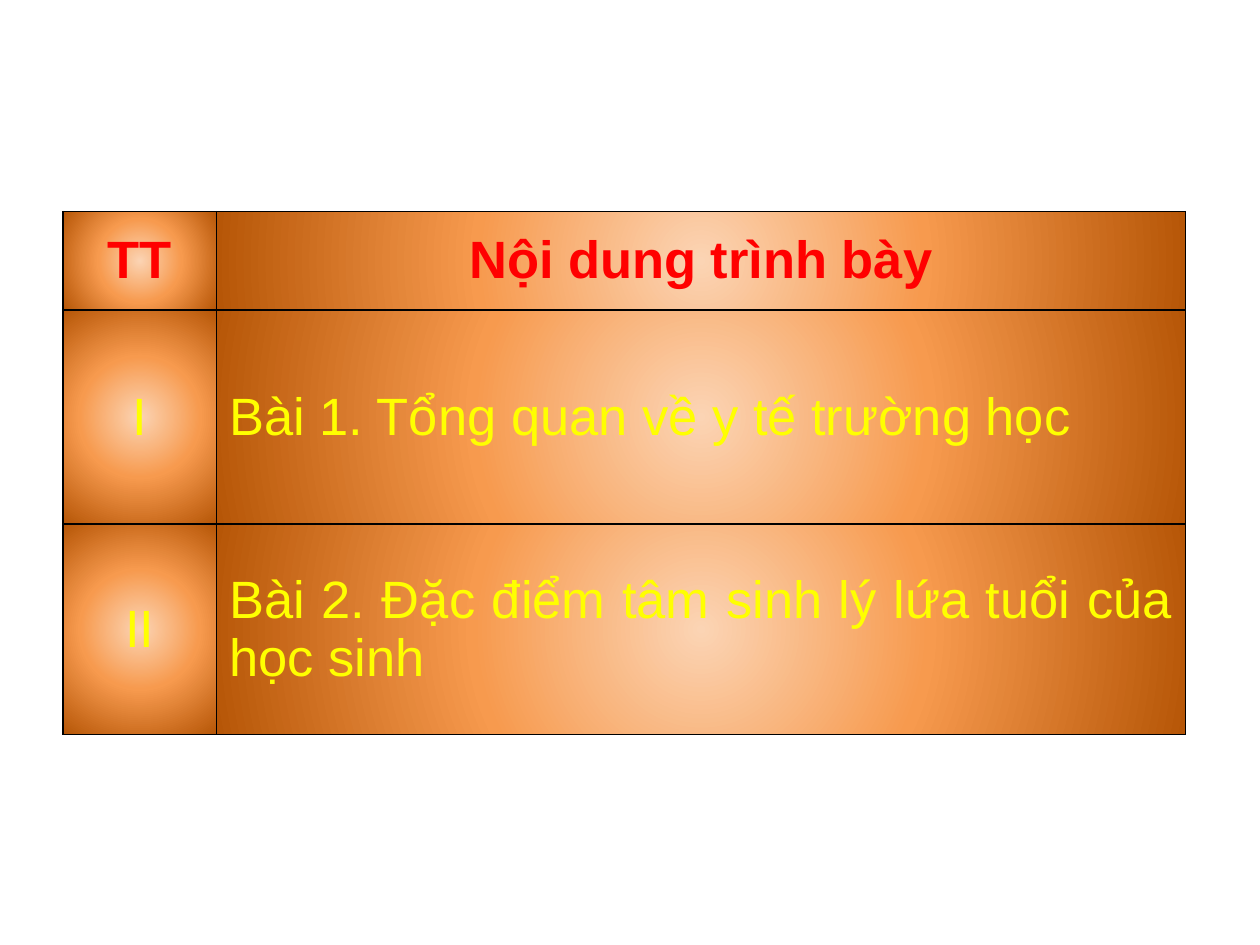
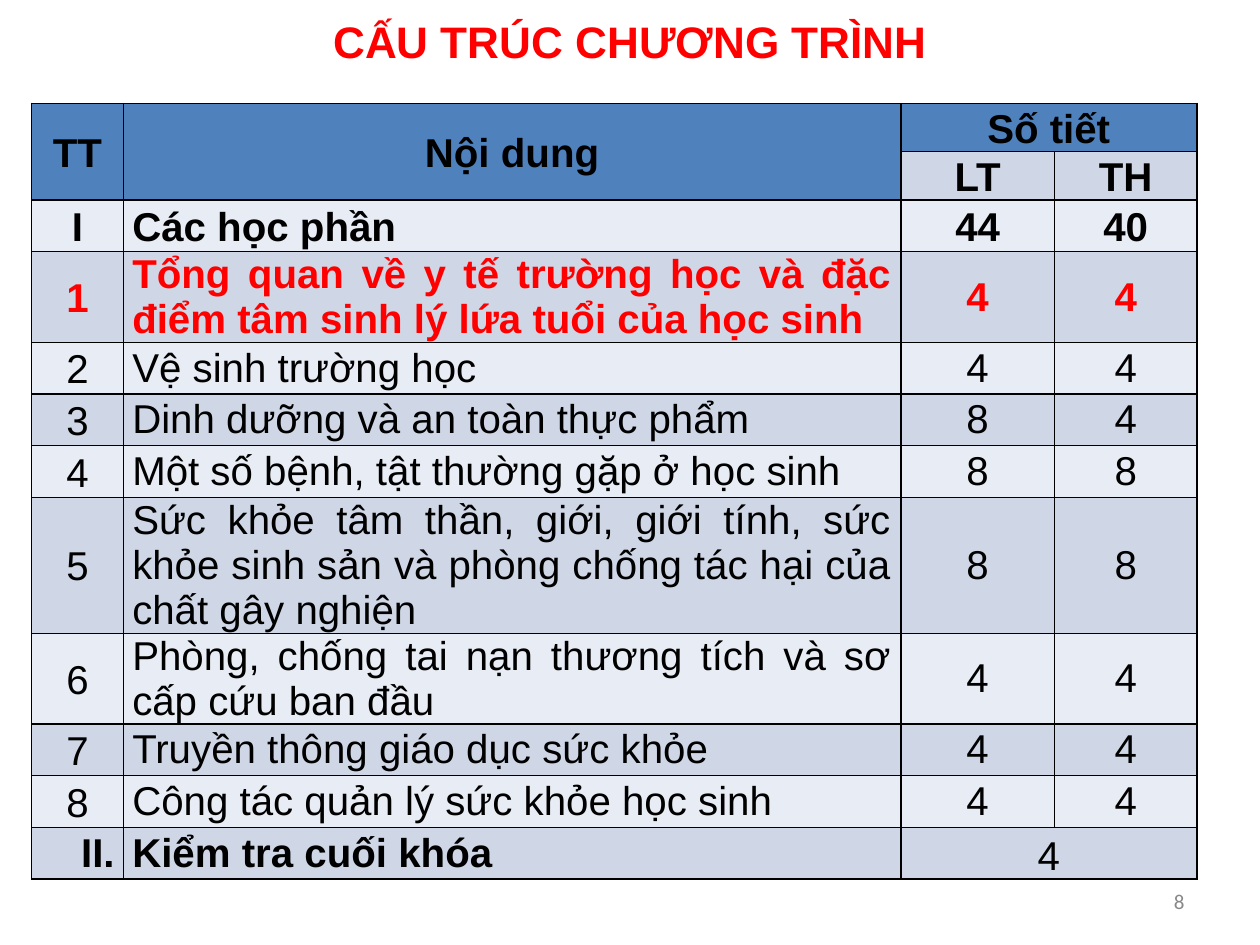
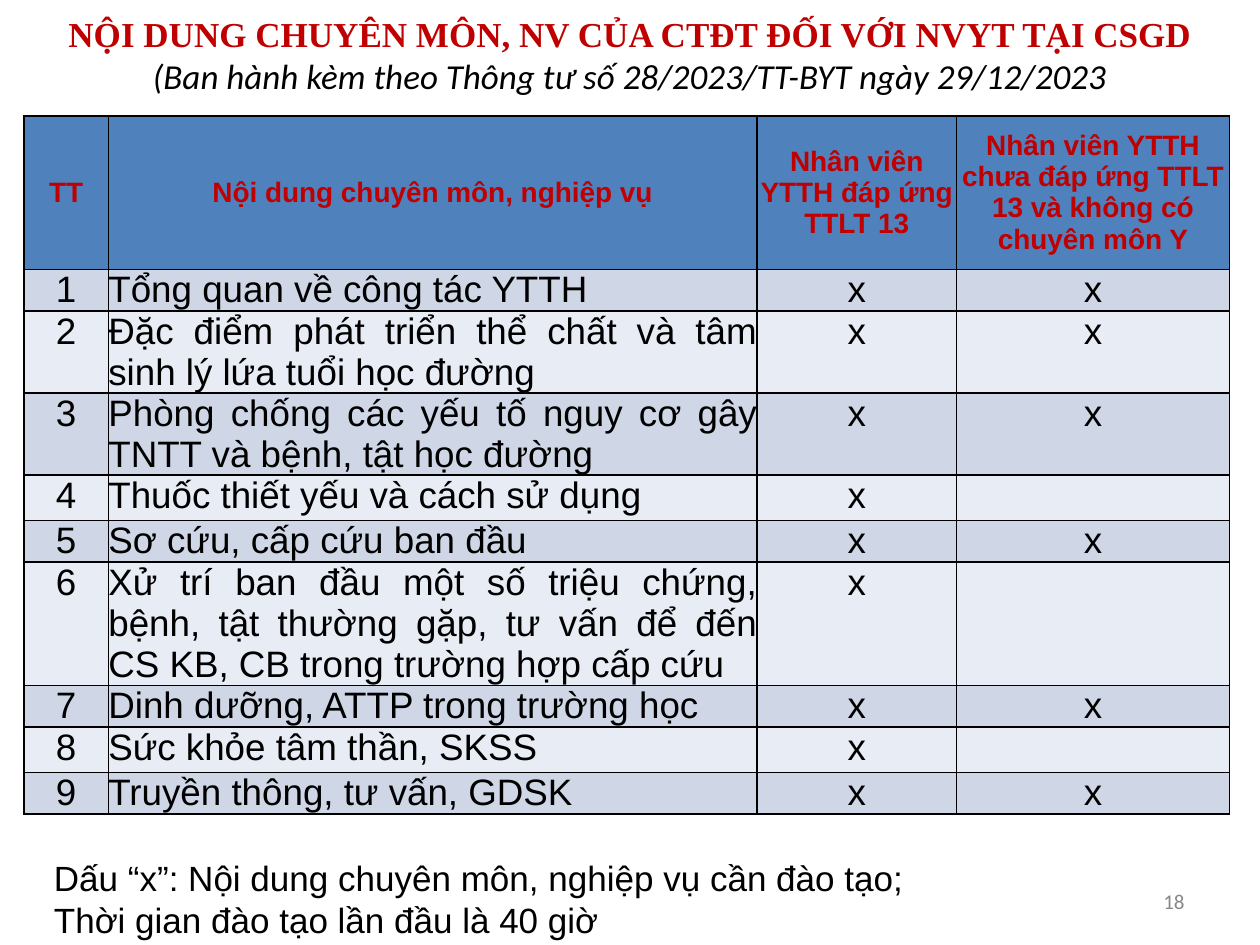
from dataclasses import dataclass

from pptx import Presentation, oxml, util as u
from pptx.dml.color import RGBColor
from pptx.enum import text as t

MID, LEFT, RIGHT, FULL = (t.PP_ALIGN.CENTER, t.PP_ALIGN.LEFT,
                          t.PP_ALIGN.RIGHT, t.PP_ALIGN.JUSTIFY)
NS = 'xmlns:a="http://schemas.openxmlformats.org/drawingml/2006/main"'


@dataclass(frozen=True)
class Theme:
    # Colours
    black: str = "000000"
    red: str = "FF0000"
    dark: str = "C00000"
    yellow: str = "FFFF00"
    grey: str = "888888"
    head: str = "4F81BD"
    bands: tuple = ("E8ECF4", "CFD7E7")
    glow: tuple = ((0, "FBD4B4"), (46, "F79A4E"), (100, "B65607"))
    # Fonts and sizes
    sans: str = "Arial"
    plain: str = "Calibri"
    serif: str = "Times New Roman"
    agenda: float = 30
    title: float = 25.2
    plan: float = 23
    task: float = 21
    note: float = 20
    label: float = 16
    number: float = 12


T = Theme()


# Text helpers
def style(para, size, color=T.black, bold=False, font=T.sans,
          align=LEFT, italic=False, space=None):
    para.alignment = align
    if space:
        para.line_spacing = space
    for run in para.runs:
        face = run.font
        face.name, face.size = font, u.Pt(size)
        face.bold, face.italic = bold, italic
        face.color.rgb = RGBColor.from_string(color)


def write(frame, words, size, **look):
    frame.text = words
    for para in frame.paragraphs:
        style(para, size, **look)


def place(shape, left, top, width, height):
    shape.left, shape.top = u.Inches(left), u.Inches(top)
    shape.width, shape.height = u.Inches(width), u.Inches(height)


def add_title(slide, words, size, *box, **look):
    shape = slide.shapes.title
    place(shape, *box)
    frame = shape.text_frame
    frame.auto_size = t.MSO_AUTO_SIZE.NONE
    frame.vertical_anchor = t.MSO_ANCHOR.MIDDLE
    write(frame, words, size, bold=True, align=MID, **look)
    return frame


def add_text(slide, words, size, *box, anchor=t.MSO_ANCHOR.TOP, **look):
    frame = slide.shapes.add_textbox(*map(u.Inches, box)).text_frame
    frame.word_wrap = True
    frame.vertical_anchor = anchor
    write(frame, words, size, **look)


def add_number(slide, number):
    add_text(slide, str(number), T.number, 7.17, 6.95, 2.33, 0.4,
             anchor=t.MSO_ANCHOR.MIDDLE, color=T.grey, font=T.plain,
             align=RIGHT)


# Table helpers
def edge(cell):
    props = cell._tc.get_or_add_tcPr()
    for side in "LRTB":
        props.append(oxml.parse_xml(
            f'<a:ln{side} {NS} w="12700"><a:solidFill>'
            f'<a:srgbClr val="{T.black}"/></a:solidFill></a:ln{side}>'))


def flat(cell, color):
    cell.fill.solid()
    cell.fill.fore_color.rgb = RGBColor.from_string(color)


def glow(cell):
    stops = "".join(f'<a:gs pos="{at * 1000}"><a:srgbClr val="{color}"/></a:gs>'
                    for at, color in T.glow)
    cell._tc.get_or_add_tcPr().append(oxml.parse_xml(
        f'<a:gradFill {NS}><a:gsLst>{stops}</a:gsLst><a:path path="circle">'
        '<a:fillToRect l="50000" t="50000" r="50000" b="50000"/>'
        '</a:path></a:gradFill>'))


def add_grid(slide, left, top, cols, rows, pad=(0.1, 0.05)):
    grid = slide.shapes.add_table(
        len(rows), len(cols), u.Inches(left), u.Inches(top),
        u.Inches(sum(cols)), u.Inches(sum(rows))).table
    for col, width in zip(grid.columns, cols):
        col.width = u.Inches(width)
    for row, height in zip(grid.rows, rows):
        row.height = u.Inches(height)
    for cell in grid.iter_cells():
        cell.margin_left = cell.margin_right = u.Inches(pad[0])
        cell.margin_top = cell.margin_bottom = u.Inches(pad[1])
        cell.vertical_anchor = t.MSO_ANCHOR.MIDDLE
        edge(cell)
    return grid


def paint(grid):
    for num, row in enumerate(grid.rows):
        for cell in row.cells:
            flat(cell, T.bands[num % 2] if num else T.head)


# Slides
def add_agenda(deck):
    slide = deck.slides.add_slide(deck.slide_layouts[6])
    items = [("TT", "Nội dung trình bày"),
             ("I", "Bài 1. Tổng quan về y tế trường học"),
             ("II", "Bài 2. Đặc điểm tâm sinh lý lứa tuổi của học sinh")]
    grid = add_grid(slide, 0.5, 1.68, [1.22, 7.69], [0.78, 1.7, 1.67])
    for row, item in enumerate(items):
        for col, words in enumerate(item):
            cell = grid.cell(row, col)
            glow(cell)
            write(cell.text_frame, words, T.agenda, bold=row == 0,
                  color=T.yellow if row else T.red,
                  align=FULL if row and col else MID)


def add_plan(deck):
    slide = deck.slides.add_slide(deck.slide_layouts[5])
    add_title(slide, "CẤU TRÚC CHƯƠNG TRÌNH", T.title,
              0.5, 0.08, 9, 0.49, color=T.red)
    items = [
        ("TT", "Nội dung", "Số tiết", ""),
        ("", "", "LT", "TH"),
        ("I", "Các học phần", "44", "40"),
        ("1", "Tổng quan về y tế trường học và đặc điểm tâm sinh lý "
              "lứa tuổi của học sinh", "4", "4"),
        ("2", "Vệ sinh trường học", "4", "4"),
        ("3", "Dinh dưỡng và an toàn thực phẩm", "8", "4"),
        ("4", "Một số bệnh, tật thường gặp ở học sinh", "8", "8"),
        ("5", "Sức khỏe tâm thần, giới, giới tính, sức khỏe sinh sản và "
              "phòng chống tác hại của chất gây nghiện", "8", "8"),
        ("6", "Phòng, chống tai nạn thương tích và sơ cấp cứu ban đầu",
         "4", "4"),
        ("7", "Truyền thông giáo dục sức khỏe", "4", "4"),
        ("8", "Công tác quản lý sức khỏe học sinh", "4", "4"),
        ("II.", "Kiểm tra cuối khóa", "4", "")]
    last, focus = len(items) - 1, 3
    one, two, three = 0.41, 0.72, 1.08
    rows = [0.38, 0.38, one, two, one, one, one, three, two, one, one, one]
    grid = add_grid(slide, 0.25, 0.82, [0.73, 6.17, 1.22, 1.13], rows,
                    (0.07, 0))
    paint(grid)
    for row, item in enumerate(items):
        for col, words in enumerate(item):
            if not words:
                continue
            end = row == last
            align = FULL if col == 1 and row > 1 else MID
            if end and col == 0:
                align = RIGHT
            loose = row < focus or (col == 0 and not end) or (end and col == 2)
            write(grid.cell(row, col).text_frame, words, T.plan,
                  color=T.red if row == focus else T.black,
                  bold=row <= focus or (end and col < 2),
                  align=align, space=1.07 if loose else None)
    # Joined cells
    for top, left, low, right in [(0, 0, 1, 0), (0, 1, 1, 1),
                                  (0, 2, 0, 3), (last, 2, last, 3)]:
        grid.cell(top, left).merge(grid.cell(low, right))
    grid.cell(last, 2).vertical_anchor = t.MSO_ANCHOR.BOTTOM
    add_number(slide, 8)


def add_tasks(deck):
    slide = deck.slides.add_slide(deck.slide_layouts[5])
    frame = add_title(
        slide, "NỘI DUNG CHUYÊN MÔN, NV CỦA CTĐT ĐỐI VỚI NVYT TẠI CSGD\n"
        "(Ban hành kèm theo Thông tư số 28/2023/TT-BYT ngày 29/12/2023",
        T.note, 0.21, 0, 9.58, 0.87, color=T.dark, font=T.serif)
    style(frame.paragraphs[1], T.note, font=T.plain, align=MID, italic=True)
    heads = ["TT", "Nội dung chuyên môn, nghiệp vụ",
             "Nhân viên YTTH đáp ứng TTLT 13",
             "Nhân viên YTTH\nchưa đáp ứng TTLT 13 và không có chuyên môn Y"]
    # Task, row height, whether the last column is marked
    tasks = [
        ("Tổng quan về công tác YTTH", 0.33, True),
        ("Đặc điểm phát triển thể chất và tâm sinh lý lứa tuổi học đường",
         0.65, True),
        ("Phòng chống các yếu tố nguy cơ gây TNTT và bệnh, tật học đường",
         0.65, True),
        ("Thuốc thiết yếu và cách sử dụng", 0.36, False),
        ("Sơ cứu, cấp cứu ban đầu", 0.33, True),
        ("Xử trí ban đầu một số triệu chứng, bệnh, tật thường gặp, tư vấn "
         "để đến CS KB, CB trong trường hợp cấp cứu", 0.98, False),
        ("Dinh dưỡng, ATTP trong trường học", 0.33, True),
        ("Sức khỏe tâm thần, SKSS", 0.36, False),
        ("Truyền thông, tư vấn, GDSK", 0.33, True)]
    grid = add_grid(slide, 0.19, 0.92, [0.67, 5.15, 1.58, 2.17],
                    [1.22] + [high for _, high, _ in tasks], (0, 0))
    paint(grid)
    for col, words in enumerate(heads):
        write(grid.cell(0, col).text_frame, words, T.label,
              color=T.dark, bold=True, align=MID)
    for row, (task, _, both) in enumerate(tasks, 1):
        for col, words in enumerate([str(row), task, "x", "x" if both else ""]):
            cell = grid.cell(row, col)
            cell.vertical_anchor = t.MSO_ANCHOR.TOP
            if words:
                write(cell.text_frame, words, T.task,
                      align=FULL if col == 1 else MID)
    add_number(slide, 18)
    add_text(slide, "Dấu “x”: Nội dung chuyên môn, nghiệp vụ cần đào tạo;\n"
             "Thời gian đào tạo lần đầu là 40 giờ", T.note,
             0.33, 6.75, 9.17, 0.77)


def main():
    deck = Presentation()
    deck.slide_width, deck.slide_height = u.Inches(10), u.Inches(7.5)
    add_agenda(deck)
    add_plan(deck)
    add_tasks(deck)
    deck.save("out.pptx")


if __name__ == "__main__":
    main()
